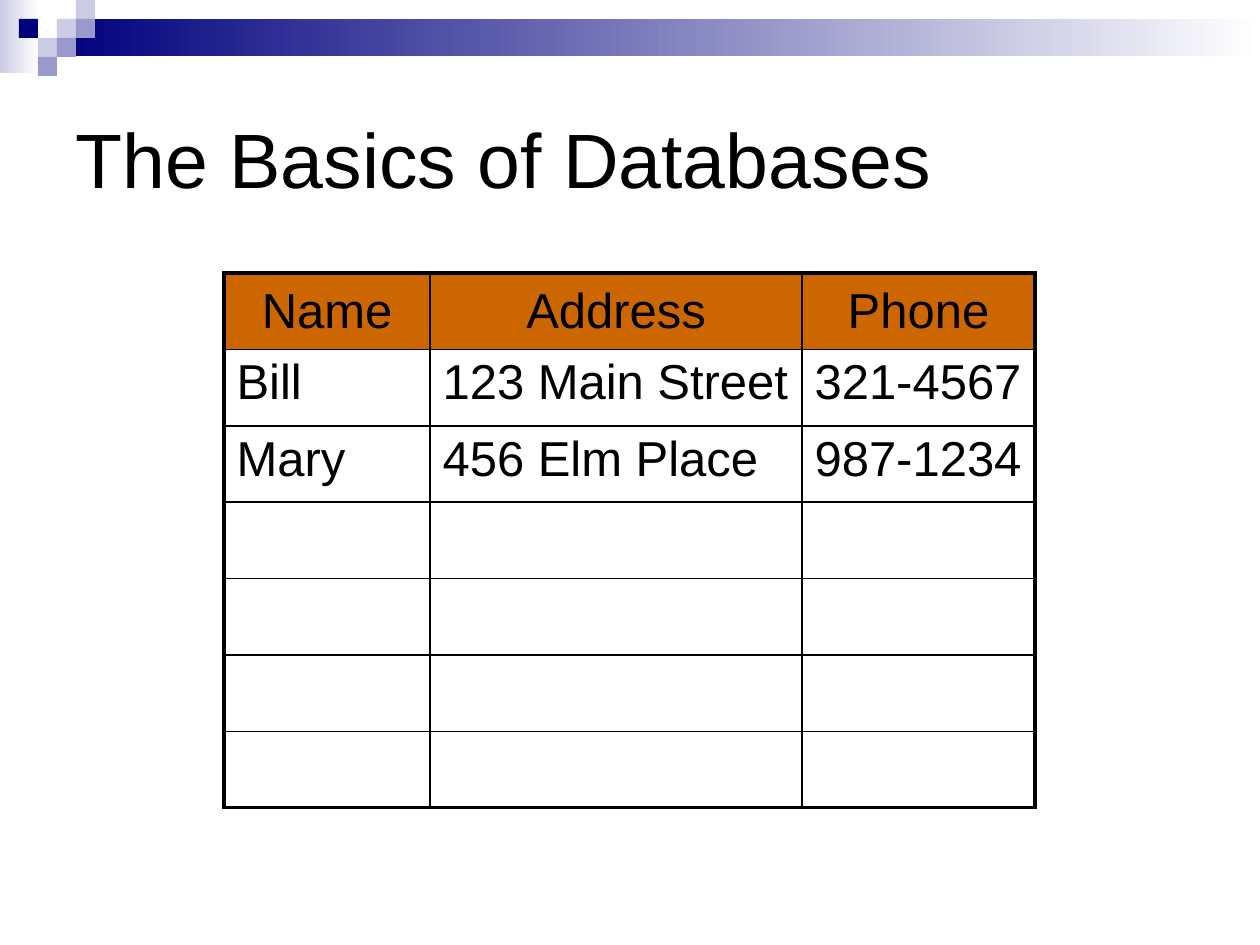
from lxml import etree
from pptx import Presentation
from pptx.dml.color import RGBColor
from pptx.enum.shapes import MSO_SHAPE
from pptx.enum.text import MSO_ANCHOR, PP_ALIGN
from pptx.oxml.ns import qn
from pptx.util import Emu, Pt

RECT = MSO_SHAPE.RECTANGLE
TOP, MIDDLE = MSO_ANCHOR.TOP, MSO_ANCHOR.MIDDLE
LEFT, CENTER = PP_ALIGN.LEFT, PP_ALIGN.CENTER

BLACK = RGBColor(0x00, 0x00, 0x00)
WHITE = RGBColor(0xFF, 0xFF, 0xFF)
NAVY = RGBColor(0x00, 0x00, 0x7D)
LILAC = RGBColor(0xCC, 0xCC, 0xE6)
VIOLET = RGBColor(0x99, 0x99, 0xCC)
ORANGE = RGBColor(0xCC, 0x66, 0x00)

FONT = "Arial"
THICK, THIN = 2.25, 1
SQUARE = 19  # side of one square of the corner pattern
SQUARES = [  # column, row, colour
    (3, 1, LILAC), (4, 0, LILAC), (4, 1, VIOLET), (2, 2, LILAC),
    (1, 1, NAVY), (3, 2, VIOLET), (2, 3, VIOLET),
]
CONTACTS = [
    ["Name", "Address", "Phone"],
    ["Bill", "123 Main Street", "321-4567"],
    ["Mary", "456 Elm Place", "987-1234"],
] + [[""] * 3] * 4


def px(n):
    return Emu(round(n * 914400 / 126))


def write(tf, text, size=28, color=BLACK, align=LEFT, anchor=TOP):
    tf.word_wrap = True
    tf.vertical_anchor = anchor
    p = tf.paragraphs[0]
    p.alignment = align
    p.font.size = Pt(size)
    if text:
        r = p.add_run()
        r.text = text
        r.font.name = FONT
        r.font.size = Pt(size)
        r.font.color.rgb = color


def add_border(cell, side, width):
    """Draw one side (L, R, T or B); call it before the cell is filled."""
    tcPr = cell._tc.get_or_add_tcPr()
    ln = etree.SubElement(tcPr, qn(f"a:ln{side}"), w=str(Pt(width)))
    fill = etree.SubElement(ln, qn("a:solidFill"))
    etree.SubElement(fill, qn("a:srgbClr"), val=str(BLACK))


class Deck:
    """Holds the presentation and its current slide."""

    def __init__(self, width, height):
        self.prs = Presentation()
        self.prs.slide_width, self.prs.slide_height = px(width), px(height)
        self.s = self.prs.slides.add_slide(self.prs.slide_layouts[5])

    def title(self, text, x, y, w, h):
        sp = self.s.shapes.title
        sp.left, sp.top, sp.width, sp.height = map(px, (x, y, w, h))
        write(sp.text_frame, text, size=44, anchor=MIDDLE)

    def rect(self, x, y, w, h, color, fade_to=None):
        sp = self.s.shapes.add_shape(RECT, *map(px, (x, y, w, h)))
        sp.shadow.inherit = False
        sp.line.fill.background()
        if fade_to is None:
            sp.fill.solid()
            sp.fill.fore_color.rgb = color
            return
        sp.fill.gradient()
        sp.fill.gradient_angle = 0
        for stop, rgb in zip(sp.fill.gradient_stops, (color, fade_to)):
            stop.color.rgb = rgb

    def table(self, rows, x, y, widths, height):
        last_row, last_col = len(rows) - 1, len(widths) - 1
        table = self.s.shapes.add_table(
            len(rows), len(widths), px(x), px(y), px(sum(widths)), px(height)
        ).table
        table.first_row = table.horz_banding = False
        for column, width in zip(table.columns, widths):
            column.width = px(width)
        for i, row in enumerate(rows):
            table.rows[i].height = px(height / len(rows))
            for j, text in enumerate(row):
                cell = table.cell(i, j)
                outer = {"L": j == 0, "R": j == last_col,
                         "T": i == 0, "B": i == last_row}
                for side, is_outer in outer.items():
                    add_border(cell, side, THICK if is_outer else THIN)
                if i == 0:
                    cell.fill.solid()
                    cell.fill.fore_color.rgb = ORANGE
                    write(cell.text_frame, text, align=CENTER)
                    cell.vertical_anchor = MIDDLE
                else:
                    cell.fill.background()
                    write(cell.text_frame, text)


def main():
    deck = Deck(1260, 945)
    deck.rect(0, 0, 39, 73, LILAC, fade_to=WHITE)
    deck.rect(57, 19, 1203, 37, NAVY, fade_to=WHITE)
    for col, row, color in SQUARES:
        deck.rect(col * SQUARE, row * SQUARE, SQUARE, SQUARE, color)
    deck.title("The Basics of Databases", 63, 63, 1134, 189)
    deck.table(CONTACTS, 224, 273, [206, 372, 233], 535)
    deck.prs.save("out.pptx")


if __name__ == "__main__":
    main()
